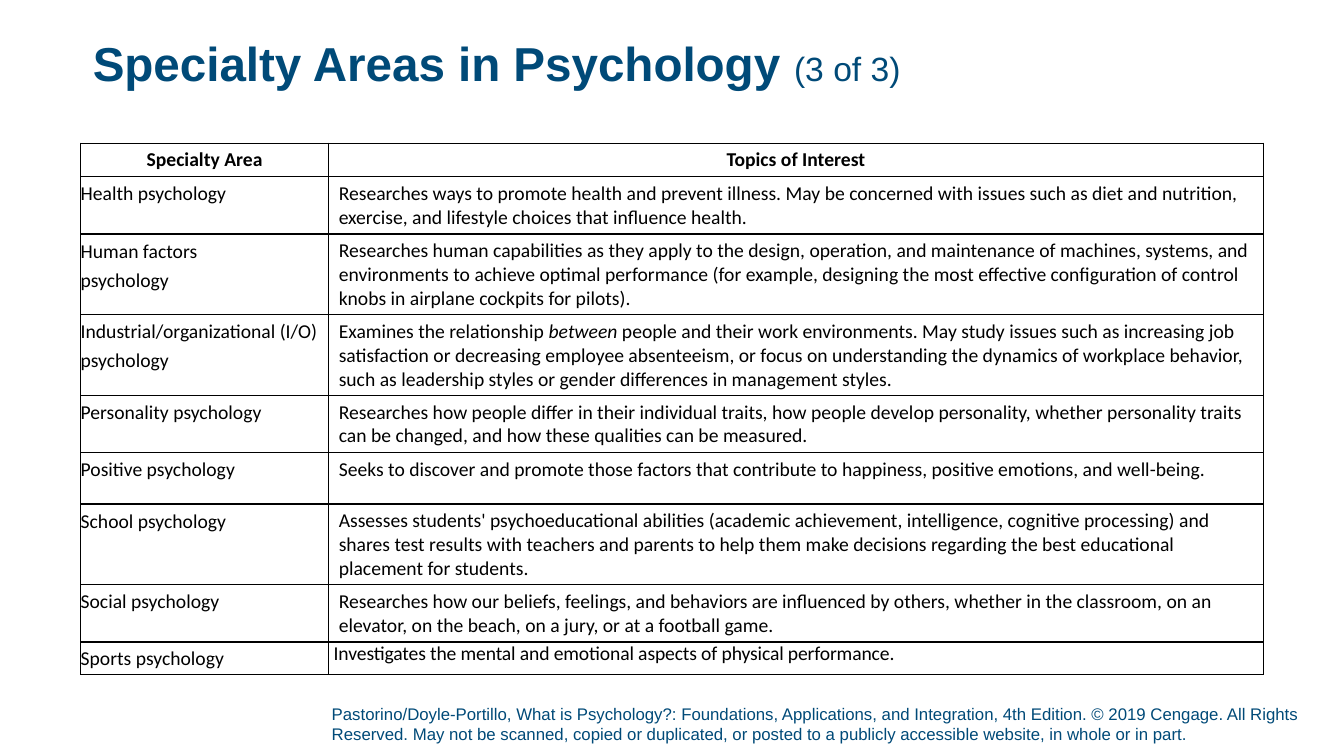
from lxml.etree import SubElement
from pptx import Presentation
from pptx.dml.color import RGBColor
from pptx.enum.text import MSO_ANCHOR as Anchor, MSO_AUTO_SIZE as AutoSize, PP_ALIGN as Align
from pptx.oxml.ns import qn
from pptx.util import Inches, Pt

NAVY, BLACK = "004A78", "000000"
COLUMN_WIDTHS = [2.46, 9.27]
ROW_HEIGHTS = [0.32, 0.51, 0.72, 0.72, 0.51, 0.51, 0.72, 0.51, 0.32]
HEADINGS = ["Specialty Area", "Topics of Interest"]
SPECIALTIES = [
    ("Health psychology",
     ["Researches ways to promote health and prevent illness. May be concerned with issues such as "
      "diet and nutrition, exercise, and lifestyle choices that influence health."]),
    ("Human factors\npsychology",
     ["Researches human capabilities as they apply to the design, operation, and maintenance of "
      "machines, systems, and environments to achieve optimal performance (for example, designing "
      "the most effective configuration of control knobs in airplane cockpits for pilots)."]),
    ("Industrial/organizational (I/O) psychology",
     ["Examines the relationship ", "between ",
      "people and their work environments. May study issues such as increasing job satisfaction or "
      "decreasing employee absenteeism, or focus on understanding the dynamics of workplace "
      "behavior, such as leadership styles or gender differences in management styles."]),
    ("Personality psychology",
     ["Researches how people differ in their individual traits, how people develop personality, "
      "whether personality traits can be changed, and how these qualities can be measured."]),
    ("Positive psychology",
     ["Seeks to discover and promote those factors that contribute to happiness, positive emotions, "
      "and well-being."]),
    ("School psychology",
     ["Assesses students' psychoeducational abilities (academic achievement, intelligence, cognitive "
      "processing) and shares test results with teachers and parents to help them make decisions "
      "regarding the best educational placement for students."]),
    ("Social psychology",
     ["Researches how our beliefs, feelings, and behaviors are influenced by others, whether in the "
      "classroom, on an elevator, on the beach, on a jury, or at a football game."]),
    ("Sports psychology",
     ["Investigates the mental and emotional aspects of physical performance."]),
]
COPYRIGHT = (
    "Pastorino/Doyle-Portillo, What is Psychology?: Foundations, Applications, and Integration, "
    "4th Edition. © 2019 Cengage. All Rights Reserved. May not be scanned, copied or duplicated, "
    "or posted to a publicly accessible website, in whole or in part.")


def color(value):
    return RGBColor.from_string(value)


def add_run(paragraph, text, size, face, ink, bold=False, italic=False):
    run = paragraph.add_run()
    run.text = text
    font = run.font
    font.size, font.name, font.bold, font.italic = Pt(size), face, bold, italic
    font.color.rgb = color(ink)
    return run


def set_margins(frame, left=0, top=0, right=0, bottom=0):
    frame.margin_left, frame.margin_top = Inches(left), Inches(top)
    frame.margin_right, frame.margin_bottom = Inches(right), Inches(bottom)


def place_title(slide, left, top, width, height):
    title = slide.shapes.title
    title.left, title.top = Inches(left), Inches(top)
    title.width, title.height = Inches(width), Inches(height)
    frame = title.text_frame
    set_margins(frame)
    frame.auto_size = AutoSize.NONE
    frame.vertical_anchor = Anchor.TOP
    heading = frame.paragraphs[0]
    heading.alignment = Align.LEFT
    heading.line_spacing = 0.9
    add_run(heading, "Specialty Areas in Psychology ", 34, "Arial", NAVY, bold=True)
    add_run(heading, "(3 of 3)", 24, "Arial", NAVY)


def style_cell(cell):
    properties = cell._tc.get_or_add_tcPr()
    for side in ("a:lnL", "a:lnR", "a:lnT", "a:lnB"):
        border = SubElement(properties, qn(side), w=str(Pt(1)))
        SubElement(SubElement(border, qn("a:solidFill")), qn("a:srgbClr"), val=BLACK)
    cell.fill.background()


def fill_area(cell, area):
    set_margins(cell)
    paragraph = cell.text_frame.paragraphs[0]
    paragraph.line_spacing = Pt(20.9)
    for index, line in enumerate(area.split("\n")):
        if index:
            paragraph.add_line_break()
        add_run(paragraph, line, 14, "Calibri", BLACK)


def fill_topics(cell, topics, last):
    paragraph = cell.text_frame.paragraphs[0]
    if last:
        set_margins(cell, left=0.05)
    for index, topic in enumerate(topics):
        run = add_run(paragraph, topic, 14, "Calibri", BLACK, italic=index == 1)
        if last:
            run.font._element.set("spc", "-10")


def place_specialties(slide, left, top):
    table = slide.shapes.add_table(
        len(ROW_HEIGHTS), len(COLUMN_WIDTHS), Inches(left), Inches(top),
        Inches(sum(COLUMN_WIDTHS)), Inches(sum(ROW_HEIGHTS))).table
    table.first_row = table.horz_banding = False
    for column, width in zip(table.columns, COLUMN_WIDTHS):
        column.width = Inches(width)
    for row, height in zip(table.rows, ROW_HEIGHTS):
        row.height = Inches(height)
    for cell in table.iter_cells():
        style_cell(cell)
    for column, heading in enumerate(HEADINGS):
        cell = table.cell(0, column)
        cell.vertical_anchor = Anchor.MIDDLE
        paragraph = cell.text_frame.paragraphs[0]
        paragraph.alignment = Align.CENTER
        add_run(paragraph, heading, 14, "Calibri", BLACK, bold=True)
    for row, (area, topics) in enumerate(SPECIALTIES, 1):
        fill_area(table.cell(row, 0), area)
        fill_topics(table.cell(row, 1), topics, row == len(SPECIALTIES))


def place_copyright(slide, left, top, width, height):
    frame = slide.shapes.add_textbox(
        Inches(left), Inches(top), Inches(width), Inches(height)).text_frame
    set_margins(frame, bottom=0.05)
    frame.word_wrap = True
    frame.vertical_anchor = Anchor.BOTTOM
    add_run(frame.paragraphs[0], COPYRIGHT, 12, "Arial", NAVY)


def main():
    deck = Presentation()
    deck.slide_width, deck.slide_height = Inches(13.33), Inches(7.5)
    slide = deck.slides.add_slide(deck.slide_layouts[5])
    place_copyright(slide, 3.29, 6.98, 9.79, 0.45)
    place_title(slide, 0.92, 0.4, 11.5, 0.74)
    place_specialties(slide, 0.8, 1.42)
    deck.save("out.pptx")


if __name__ == "__main__":
    main()
